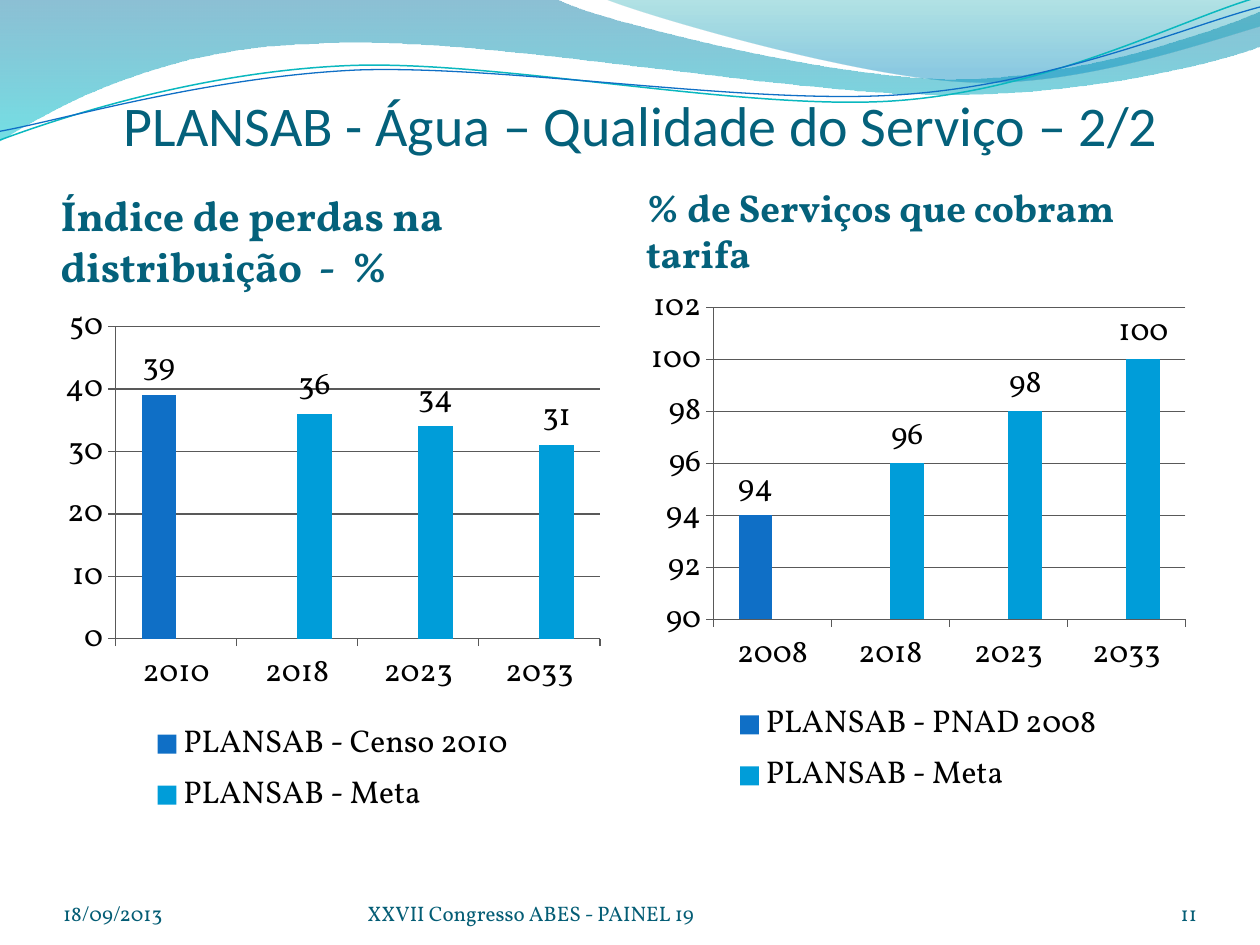
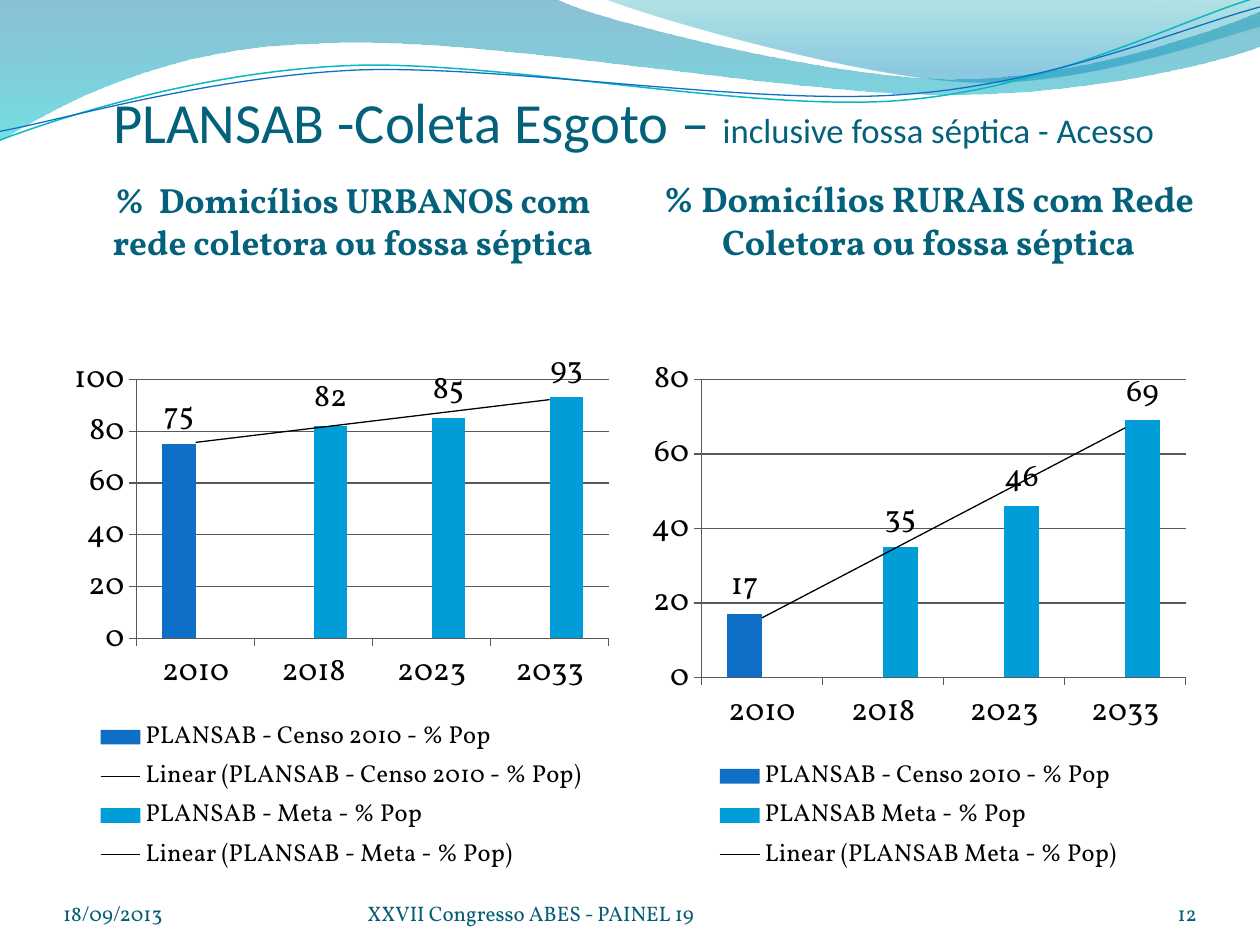
from lxml import etree
from pptx import Presentation
from pptx.chart.data import CategoryChartData
from pptx.dml.color import RGBColor
from pptx.enum import chart as ce, text as te
from pptx.oxml import ns, parse_xml
from pptx.util import Pt

TITLE_TEAL = RGBColor(0x04, 0x61, 0x7B)
FOOTER_TEAL = RGBColor(0x04, 0x5D, 0x75)
BASELINE_BLUE = RGBColor(0x0F, 0x6F, 0xC6)
TARGET_BLUE = RGBColor(0x00, 0x9D, 0xD9)
CURVE_TEAL = RGBColor(0x0A, 0xB8, 0xBF)
DEEP_BLUE = RGBColor(0x00, 0x74, 0xA1)
CYAN = RGBColor(0x00, 0xC6, 0xCF)
SEA_GREEN = RGBColor(0x00, 0xA1, 0xA9)
SKY_BLUE = RGBColor(0x00, 0x8B, 0xBF)
AXIS_GREY = RGBColor(0x59, 0x59, 0x59)
BLACK = RGBColor(0, 0, 0)

TITLE_FONT, BODY_FONT = "Calibri", "Vollkorn"
LEFT, CENTER, RIGHT = te.PP_ALIGN.LEFT, te.PP_ALIGN.CENTER, te.PP_ALIGN.RIGHT

SLIDES = [
    dict(
        number="11",
        title=[("PLANSAB - Água – Qualidade do Serviço – 2/2", 32)],
        panels=[
            dict(heading="Índice de perdas na distribuição  -  %",
                 heading_at=(31, 111.4), size=24, align=LEFT,
                 chart_at=(31, 167.8), axis=(0, 50, 10), years=(2010, 2018, 2023, 2033),
                 baseline=("PLANSAB - Censo 2010", 39),
                 targets=("PLANSAB - Meta", 36, 34, 31)),
            dict(heading="% de Serviços que cobram tarifa",
                 heading_at=(365.6, 105.6), size=22.2, align=LEFT,
                 chart_at=(365.6, 156.8), axis=(90, 102, 2), years=(2008, 2018, 2023, 2033),
                 baseline=("PLANSAB - PNAD 2008", 94),
                 targets=("PLANSAB - Meta", 96, 98, 100)),
        ]),
    dict(
        number="12",
        title=[("PLANSAB -Coleta Esgoto – ", 32.4),
               ("inclusive fossa séptica - Acesso", 19.8), (" ", 39.6)],
        panels=[
            dict(heading="%  Domicílios URBANOS com rede coletora ou fossa séptica",
                 heading_at=(42.5, 100), size=20, align=CENTER,
                 chart_at=(36, 198), axis=(0, 100, 20), years=(2010, 2018, 2023, 2033),
                 baseline=("PLANSAB - Censo 2010 - % Pop", 75),
                 targets=("PLANSAB - Meta - % Pop", 82, 85, 93),
                 legend_size=14, trends=(0, 1), hidden_entry=2),
            dict(heading="% Domicílios RURAIS com Rede Coletora ou fossa séptica",
                 heading_at=(371.5, 99.6), size=20.4, align=CENTER,
                 chart_at=(365.8, 198), axis=(0, 80, 20), years=(2010, 2018, 2023, 2033),
                 baseline=("PLANSAB - Censo 2010 - % Pop", 17),
                 targets=("PLANSAB Meta - % Pop", 35, 46, 69),
                 legend_size=14, trends=(1,)),
        ]),
]

# (text, left, width, alignment); None stands for the slide number
FOOTERS = [
    (None, 624, 60, RIGHT),
    ("18/09/2013", 36, 168, LEFT),
    ("XXVII Congresso ABES - PAINEL 19", 210, 264, LEFT),
]

# A step holds one point for a straight line or three for a Bézier curve.
# Gradient stops are (position, colour, opacity %).
WAVE_BANDS = [
    ([[(0, 0)], [(317, -1)],
      [(343, 12), (478, 45), (546, 45)], [(614, 45), (690, 19), (720, 6.5)],
      [(721, 26)],
      [(708, 32), (626, 55), (537, 54)], [(447, 54), (275, 20), (185, 24.5)],
      [(93, 26), (33, 60), (-1, 81)], [(0, 0)]],
     [(0, DEEP_BLUE, 45), (1, CYAN, 55)]),
    ([[(345, -1)],
      [(366, 8), (491, 45), (554, 47)], [(616, 50), (692, 23), (720, 15)],
      [(720, 0)], [(345, -1)]],
     [(0, SEA_GREEN, 30), (0.8, SKY_BLUE, 45)]),
]
WAVE_LINES = [
    ([[(0, 80)], [(35, 67), (114, 41), (199, 37.5)],
      [(284, 34), (427, 64), (513, 57.5)], [(600, 51), (675, 11), (718.5, -1.5)]],
     CURVE_TEAL, 0.85),
    ([[(0, 75)], [(34, 69), (118, 44), (204, 40)],
      [(290, 37), (430, 60.5), (516, 54)], [(602, 48), (678, 15), (720, 4)]],
     BASELINE_BLUE, 0.75),
]

TRENDLINE = f"""<c:trendline {ns.nsdecls("c", "a")}>
<c:spPr><a:ln w="9525"><a:solidFill><a:srgbClr val="{BLACK}"/></a:solidFill></a:ln></c:spPr>
<c:trendlineType val="linear"/><c:dispRSqr val="0"/><c:dispEq val="0"/></c:trendline>"""


def add_outline(shapes, steps, close):
    """Build a polygon through all points, then merge each curve's three lines into one Bézier."""
    start, *rest = [(Pt(x), Pt(y)) for step in steps for x, y in step]
    builder = shapes.build_freeform(*start)
    builder.add_line_segments(rest, close=close)
    outline = builder.convert_to_shape()
    outline.shadow.inherit = False
    lines = iter(list(outline.element.iter(ns.qn("a:lnTo"))))
    for step in steps[1:]:
        first, *others = [next(lines) for _ in step]
        if others:
            curve = etree.Element(ns.qn("a:cubicBezTo"))
            first.addprevious(curve)
            for line in (first, *others):
                curve.append(line[0])
                line.getparent().remove(line)
    return outline


def add_waves(slide, master):
    """Build the waves with the slide's tools, then move them behind the master's parts."""
    waves = []
    for steps, stops in WAVE_BANDS:
        band = add_outline(slide.shapes, steps, True)
        band.line.fill.background()
        band.fill.gradient()
        band.fill.gradient_angle = 270
        for stop, (position, color, _) in zip(band.fill.gradient_stops, stops):
            stop.position = position
            stop.color.rgb = color
        for node, (_, _, opacity) in zip(band.element.iter(ns.qn("a:srgbClr")), stops):
            etree.SubElement(node, ns.qn("a:alpha")).set("val", str(opacity * 1000))
        waves.append(band)
    for steps, color, width in WAVE_LINES:
        curve = add_outline(slide.shapes, steps, False)
        curve.fill.background()
        curve.line.color.rgb = color
        curve.line.width = Pt(width)
        waves.append(curve)
    for depth, wave in enumerate(waves, start=2):
        master.shapes.element.insert(depth, wave.element)


def place(shape, left, top, width, height):
    shape.left, shape.top, shape.width, shape.height = map(Pt, (left, top, width, height))


def set_frame(shape, anchor, margins):
    frame = shape.text_frame
    frame.word_wrap = True
    frame.auto_size = te.MSO_AUTO_SIZE.NONE
    frame.vertical_anchor = anchor
    (frame.margin_left, frame.margin_top,
     frame.margin_right, frame.margin_bottom) = map(Pt, margins)
    return frame.paragraphs[0]


def style(font, name, size, color, bold=False):
    font.name, font.size, font.bold = name, Pt(size), bold
    font.color.rgb = color


def fill_title(title, pieces):
    place(title, 42.5, 0, 648, 90)
    paragraph = set_frame(title, te.MSO_ANCHOR.BOTTOM, (0, 3.6, 0, 0))
    paragraph.alignment = CENTER
    style(paragraph.font, TITLE_FONT, pieces[0][1], TITLE_TEAL)
    for wording, size in pieces:
        run = paragraph.add_run()
        run.text = wording
        run.font.size = Pt(size)


def fill_heading(heading, panel):
    place(heading, *panel["heading_at"], 318.2, 51.8)
    paragraph = set_frame(heading, te.MSO_ANCHOR.MIDDLE, (3.6, 0, 3.6, 0))
    paragraph.text = panel["heading"]
    paragraph.alignment = panel["align"]
    style(paragraph.font, BODY_FONT, panel["size"], TITLE_TEAL, True)


def add_footers(slide, number):
    for wording, left, width, align in FOOTERS:
        footer = slide.shapes.add_textbox(Pt(left), Pt(500.4), Pt(width), Pt(28.8))
        paragraph = set_frame(footer, te.MSO_ANCHOR.BOTTOM, (0, 0, 0, 0))
        paragraph.text = wording or number
        paragraph.alignment = align
        style(paragraph.font, BODY_FONT, 12, FOOTER_TEAL)


def style_axis(axis):
    axis.major_tick_mark = ce.XL_TICK_MARK.OUTSIDE
    axis.minor_tick_mark = ce.XL_TICK_MARK.NONE
    axis.format.line.color.rgb = AXIS_GREY
    axis.format.line.width = Pt(0.75)


def add_goal_chart(slide, panel):
    """Columns for the measured year and the target years, with optional trend lines."""
    data = CategoryChartData()
    data.categories = [str(year) for year in panel["years"]]
    name, measured = panel["baseline"]
    data.add_series(name, (measured, None, None, None))
    name, *targets = panel["targets"]
    data.add_series(name, (None, *targets))
    chart = slide.shapes.add_chart(ce.XL_CHART_TYPE.COLUMN_CLUSTERED,
                                   *map(Pt, (*panel["chart_at"], 318.2, 303)), data).chart
    chart.has_title = False
    style(chart.font, BODY_FONT, 18, BLACK)

    values = chart.value_axis
    values.minimum_scale, values.maximum_scale, values.major_unit = panel["axis"]
    values.has_major_gridlines = True
    values.major_gridlines.format.line.color.rgb = AXIS_GREY
    values.major_gridlines.format.line.width = Pt(0.75)
    for axis in (values, chart.category_axis):
        style_axis(axis)

    plot = chart.plots[0]
    plot.gap_width, plot.overlap = 150, 0
    plot.vary_by_categories = False
    for series, color in zip(plot.series, (BASELINE_BLUE, TARGET_BLUE)):
        series.format.fill.solid()
        series.format.fill.fore_color.rgb = color
        series.data_labels.show_value = True
        series.data_labels.position = ce.XL_LABEL_POSITION.OUTSIDE_END
    for index in panel.get("trends", ()):
        categories = plot.series[index]._element.find(ns.qn("c:cat"))
        categories.addprevious(parse_xml(TRENDLINE))

    chart.has_legend = True
    legend = chart.legend
    legend.position = ce.XL_LEGEND_POSITION.BOTTOM
    legend.include_in_layout = False
    legend.font.size = Pt(panel.get("legend_size", 18))
    if "hidden_entry" in panel:
        entry = parse_xml(f'<c:legendEntry {ns.nsdecls("c")}><c:idx val="{panel["hidden_entry"]}"/>'
                          '<c:delete val="1"/></c:legendEntry>')
        legend._element.find(ns.qn("c:legendPos")).addnext(entry)


def main():
    deck = Presentation()
    deck.slide_width, deck.slide_height = Pt(720), Pt(540)
    comparison = deck.slide_layouts[4]
    for index, content in enumerate(SLIDES):
        slide = deck.slides.add_slide(comparison)
        if index == 0:
            add_waves(slide, deck.slide_master)
        title, left_heading, left_body, right_heading, right_body = slide.placeholders
        fill_title(title, content["title"])
        for heading, body, panel in zip((left_heading, right_heading),
                                        (left_body, right_body), content["panels"]):
            fill_heading(heading, panel)
            body.element.getparent().remove(body.element)
            add_goal_chart(slide, panel)
        add_footers(slide, content["number"])
    deck.save("out.pptx")


if __name__ == "__main__":
    main()
